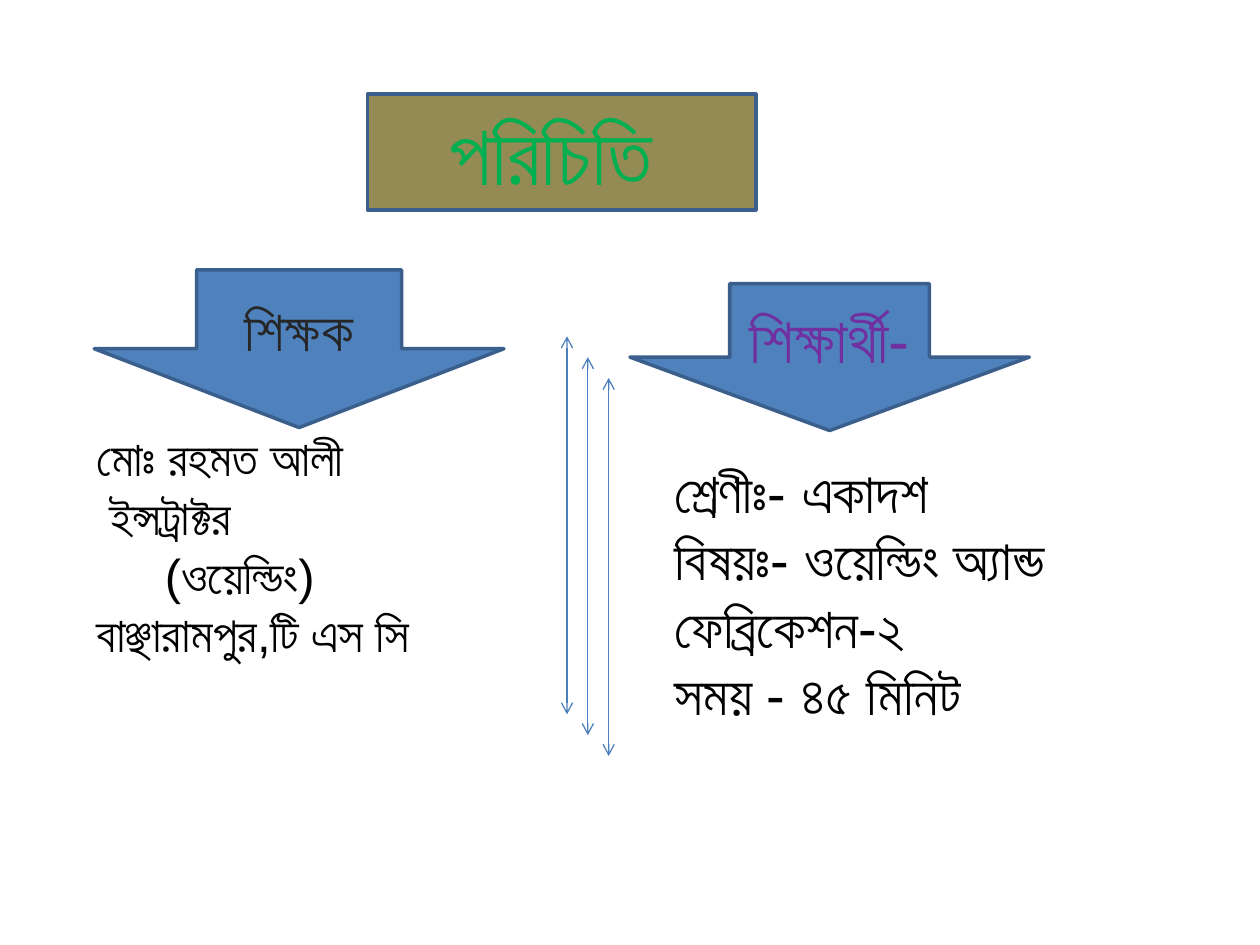
from dataclasses import dataclass

from lxml.etree import SubElement
from pptx import Presentation
from pptx.dml.color import RGBColor as Color
from pptx.enum.shapes import MSO_CONNECTOR as Connector, MSO_SHAPE as Shape
from pptx.enum.text import MSO_ANCHOR as Anchor, MSO_AUTO_SIZE as AutoSize, PP_ALIGN as Align
from pptx.oxml.ns import qn
from pptx.util import Cm, Pt


@dataclass(frozen=True)
class Theme:
    font: str = "Arial"
    banner: str = "948A54"
    arrow: str = "4F81BD"
    outline: str = "3A5F8C"
    divider: str = "4B7EBC"
    title: str = "00B050"
    teacher: str = "262626"
    student: str = "7030A0"
    body: str = "000000"
    title_size: int = 48
    student_size: int = 36
    class_size: int = 32
    teacher_size: int = 32
    detail_size: int = 28


def apply(target, values):
    for name, value in values.items():
        setattr(target, name, value)


class SlideBuilder:
    def __init__(self, page, theme):
        self.page = page
        self.theme = theme

    def place(self, box, frame):
        names = ("left", "top", "width", "height")
        apply(box, dict(zip(names, map(Cm, frame))))

    def paint(self, box, fill):
        box.fill.solid()
        box.fill.fore_color.rgb = Color.from_string(fill)
        box.line.color.rgb = Color.from_string(self.theme.outline)
        box.line.width = Pt(2)

    def fill_para(self, para, text, size, color, align):
        para.text = text
        apply(para, {"alignment": align, "space_before": Pt(0), "space_after": Pt(0)})
        for span in para.runs:
            apply(span.font, {"name": self.theme.font, "size": Pt(size)})
            span.font.color.rgb = Color.from_string(color)

    def title(self, text, frame):
        box = self.page.shapes.title
        self.place(box, frame)
        self.paint(box, self.theme.banner)
        apply(box.text_frame, {"vertical_anchor": Anchor.MIDDLE, "auto_size": AutoSize.NONE})
        self.fill_para(box.text_frame.paragraphs[0], text,
                       self.theme.title_size, self.theme.title, Align.CENTER)

    def arrow(self, text, frame, size, color):
        box = self.page.shapes.add_shape(Shape.DOWN_ARROW, *map(Cm, frame))
        box.shadow.inherit = False
        self.paint(box, self.theme.arrow)
        box.text_frame.vertical_anchor = Anchor.MIDDLE
        self.fill_para(box.text_frame.paragraphs[0], text, size, color, Align.CENTER)

    def details(self, index, rows, frame, size):
        box = self.page.placeholders[index]
        self.place(box, frame)
        content = box.text_frame
        apply(content, {"word_wrap": True, "vertical_anchor": Anchor.TOP,
                        "auto_size": AutoSize.SHAPE_TO_FIT_TEXT})
        for number, (text, indent) in enumerate(rows):
            para = content.add_paragraph() if number else content.paragraphs[0]
            self.fill_para(para, text, size, self.theme.body, Align.LEFT)
            properties = para._p.get_or_add_pPr()
            properties.set("marL", "0")
            properties.set("indent", str(Cm(indent)))
            SubElement(properties, qn("a:buNone"))

    def divider(self, left, top, length):
        line = self.page.shapes.add_connector(
            Connector.STRAIGHT, Cm(left), Cm(top), Cm(left), Cm(top + length))
        line.line.color.rgb = Color.from_string(self.theme.divider)
        line.line.width = Pt(0.75)
        outline = line.line._get_or_add_ln()
        for end in ("a:headEnd", "a:tailEnd"):
            SubElement(outline, qn(end), type="arrow")
        SubElement(line._element.spPr, qn("a:effectLst"))


def main():
    deck = Presentation()
    apply(deck, {"slide_width": Cm(25.4), "slide_height": Cm(19.05)})
    theme = Theme()
    builder = SlideBuilder(deck.slides.add_slide(deck.slide_layouts[3]), theme)

    builder.title("পরিচিতি ", (7.41, 1.9, 7.83, 2.33))
    builder.details(2, [("শ্রেণীঃ- একাদশ", 0),
                        ("বিষয়ঃ- ওয়েল্ডিং অ্যান্ড ফেব্রিকেশন-২", 0),
                        ("সময় - ৪৫ মিনিট", 0)],
                    (13.34, 9.1, 9.1, 5.74), theme.class_size)
    for step in range(3):
        builder.divider(11.43 + 0.42 * step, 6.78 + 0.42 * step, 7.62)
    builder.arrow("শিক্ষার্থী-", (12.7, 5.72, 8.05, 2.96), theme.student_size, theme.student)
    builder.arrow("শিক্ষক", (1.9, 5.44, 8.26, 3.18), theme.teacher_size, theme.teacher)
    builder.details(1, [("মোঃ রহমত আলী\n ইন্সট্রাক্টর", 0),
                        ("(ওয়েল্ডিং)\nবাঞ্ছারামপুর,টি এস সি", 1.37)],
                    (1.7, 8.49, 10.36, 5.05), theme.detail_size)
    deck.save("out.pptx")


if __name__ == "__main__":
    main()
